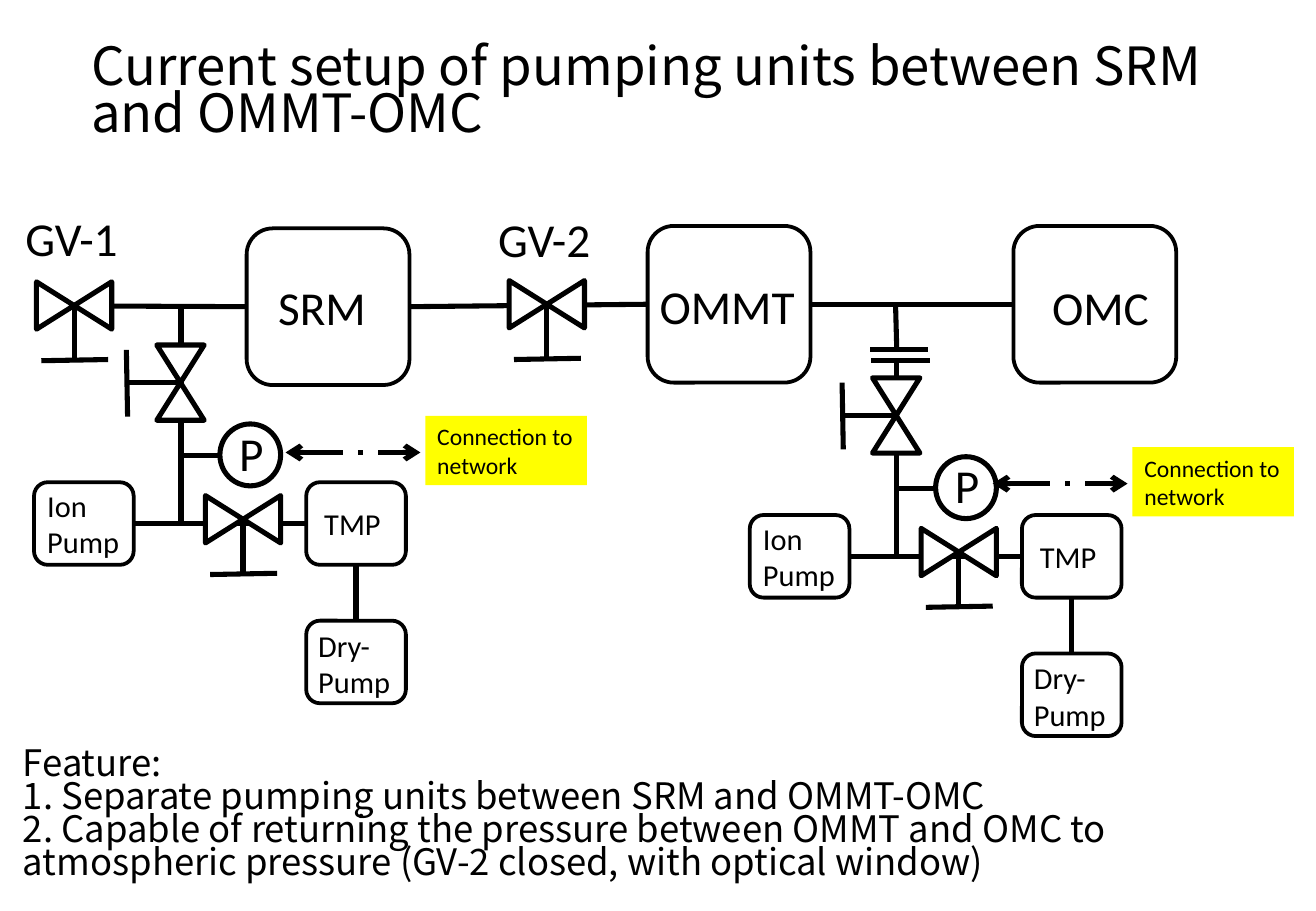
"""Build the slide on pumping units between SRM and OMMT-OMC."""
from lxml import etree
from pptx import Presentation
from pptx.dml.color import RGBColor
from pptx.enum import dml, shapes, text
from pptx.oxml.ns import qn
from pptx.util import Inches, Pt

COLORS = {"ink": "000000", "paper": "FFFFFF", "network": "FFFF00"}
BODY_FONT = "Calibri"
HEADING_FONT = "Noto Sans CJK JP"
SHAPE = shapes.MSO_SHAPE

presentation = Presentation()
presentation.slide_width = Inches(10.83)
presentation.slide_height = Inches(7.5)
slide = presentation.slides.add_slide(presentation.slide_layouts[5])


def add_block(kind, left, top, width, height, fill=None, border=None, rotation=0):
    """Add a preset shape with an optional fill and outline."""
    shape = slide.shapes.add_shape(kind, Inches(left), Inches(top), Inches(width), Inches(height))
    shape.shadow.inherit = False
    shape.rotation = rotation
    if fill:
        shape.fill.solid()
        shape.fill.fore_color.rgb = RGBColor.from_string(COLORS[fill])
    else:
        shape.fill.background()
    if border:
        shape.line.color.rgb = RGBColor.from_string(COLORS["ink"])
        shape.line.width = Pt(border)
    else:
        shape.line.fill.background()
    return shape


def add_line(x1, y1, x2, y2):
    """Add a straight black pipe."""
    line = slide.shapes.add_connector(
        shapes.MSO_CONNECTOR.STRAIGHT, Inches(x1), Inches(y1), Inches(x2), Inches(y2))
    line.line.color.rgb = RGBColor.from_string(COLORS["ink"])
    line.line.width = Pt(3)
    etree.SubElement(line._element.spPr, qn("a:effectLst"))
    return line


title = slide.shapes.title
title.left, title.top, title.width, title.height = Inches(0.65), Inches(0.25), Inches(9.54), Inches(1.06)
title.text_frame.text = "Current setup of pumping units between SRM and OMMT-OMC"

feature = slide.shapes.add_textbox(Inches(0.09), Inches(5.99), Inches(10.37), Inches(1.46))
feature.text_frame.text = (
    "Feature:\n"
    "1. Separate pumping units between SRM and OMMT-OMC\n"
    "2. Capable of returning the pressure between OMMT and OMC to "
    "atmospheric pressure (GV-2 closed, with optical window)")

for heading, size in ((title, 31.2), (feature, 21.6)):
    frame = heading.text_frame
    frame.word_wrap = True
    frame.auto_size = text.MSO_AUTO_SIZE.NONE
    frame.vertical_anchor = text.MSO_ANCHOR.MIDDLE
    for paragraph in frame.paragraphs:
        paragraph.alignment = text.PP_ALIGN.LEFT
        paragraph.line_spacing = 0.75
        paragraph.space_before = Pt(0)
        paragraph.font.size = Pt(size)
        paragraph.font.name = HEADING_FONT
        paragraph.font.color.rgb = RGBColor.from_string(COLORS["ink"])

srm, ommt, omc = [
    add_block(SHAPE.ROUNDED_RECTANGLE, left, top, 1.34, 1.29, border=2.25)
    for left, top in ((2.03, 1.88), (5.33, 1.86), (8.34, 1.86))]
add_line(0.92, 2.52, 2.03, 2.52).end_connect(srm, 1)
for start, end in ((srm, ommt), (ommt, omc)):
    pipe = add_line(3.36, 2.52, 5.33, 2.51)
    pipe.begin_connect(start, 3)
    pipe.end_connect(end, 1)

labels = [
    ("SRM", 2.19, 2.24, 1.01, 0.57, 28),
    ("OMMT", 5.33, 2.23, 1.32, 0.57, 28),
    ("OMC", 8.56, 2.24, 1, 0.57, 28),
    ("GV-1", 0.11, 1.67, 1.01, 0.57, 28),
    ("GV-2", 4, 1.68, 1.01, 0.57, 28),
]
horizontal_valves = [(0.61, 2.52), (4.5, 2.51)]
vertical_valves = []
gauges = []
networks = []

for dx, dy, pipe_top in ((0, 0, 2.52), (5.89, 0.27, 2.97)):
    ion_pump, tmp, dry_pump = [
        add_block(SHAPE.ROUNDED_RECTANGLE, left + dx, top + dy, 0.82, 0.68, border=2.25)
        for left, top in ((0.28, 3.97), (2.52, 3.97), (2.52, 5.11))]
    add_line(1.49 + dx, 4.31 + dy, 1.49 + dx, pipe_top)
    add_line(1.49 + dx, 3.75 + dy, 1.97 + dx, 3.75 + dy)
    for start, start_side, end, end_side in ((ion_pump, 3, tmp, 1), (dry_pump, 0, tmp, 2)):
        pipe = add_line(1.1, 4.31, 2.52, 4.31)
        pipe.begin_connect(start, start_side)
        pipe.end_connect(end, end_side)
    horizontal_valves.append((2 + dx, 4.28 + dy))
    vertical_valves.append((1.49 + dx, 3.15 + dy))
    gauges.append((1.81 + dx, 3.49 + dy))
    networks.append((2.35 + dx * 0.988, 3.725 + dy * 0.95))
    labels += [
        ("TMP", 2.57 + dx, 4.11 + dy, 0.67, 0.4, 18),
        ("Ion\nPump", 0.29 + dx, 3.96 + dy, 0.91, 0.71, 18),
        ("Dry-\nPump", 2.52 + dx, 5.11 + dy, 0.91, 0.71, 18),
        ("P", 1.87 + dx, 3.44 + dy, 0.45, 0.57, 28),
    ]

for x1, y, x2 in ((7.17, 2.97, 7.65), (7.16, 2.88, 7.64)):
    add_line(x1, y, x2, y)
add_line(7.38, 2.88, 7.37, 2.5)

for x, y in horizontal_valves:
    for left, rotation in ((x - 0.35, 90), (x - 0.04, 270)):
        add_block(SHAPE.ISOSCELES_TRIANGLE, left, y - 0.16, 0.39, 0.31, "paper", 3, rotation)
    add_line(x, y, x, y + 0.44)
    add_line(x - 0.27, y + 0.45, x + 0.28, y + 0.44)

for x, y in vertical_valves:
    for top, rotation in ((y - 0.31, 180), (y, 0)):
        add_block(SHAPE.ISOSCELES_TRIANGLE, x - 0.2, top, 0.39, 0.31, "paper", 3, rotation)
    add_line(x, y, x - 0.44, y)
    add_line(x - 0.45, y - 0.27, x - 0.44, y + 0.28)

for left, top in gauges:
    add_block(SHAPE.OVAL, left, top, 0.5, 0.51, "paper", 3)

written = []
for wording, left, top, width, height, size in labels:
    label = slide.shapes.add_textbox(Inches(left), Inches(top), Inches(width), Inches(height))
    label.text_frame.text = wording
    written.append((label, size))

for left, y in networks:
    arrow = add_line(left, y, left + 1.11, y)
    arrow.line.dash_style = dml.MSO_LINE.LONG_DASH_DOT
    for end in ("a:headEnd", "a:tailEnd"):
        etree.SubElement(arrow.line._get_or_add_ln(), qn(end), type="arrow")
    network = add_block(SHAPE.RECTANGLE, left + 1.15, y - 0.3, 1.33, 0.57, "network")
    network.text_frame.text = "Connection to network"
    network.text_frame.vertical_anchor = text.MSO_ANCHOR.MIDDLE
    written.append((network, 14))

for shape, size in written:
    shape.text_frame.word_wrap = True
    for paragraph in shape.text_frame.paragraphs:
        paragraph.alignment = text.PP_ALIGN.LEFT
        paragraph.font.size = Pt(size)
        paragraph.font.name = BODY_FONT
        paragraph.font.color.rgb = RGBColor.from_string(COLORS["ink"])

presentation.save("out.pptx")
